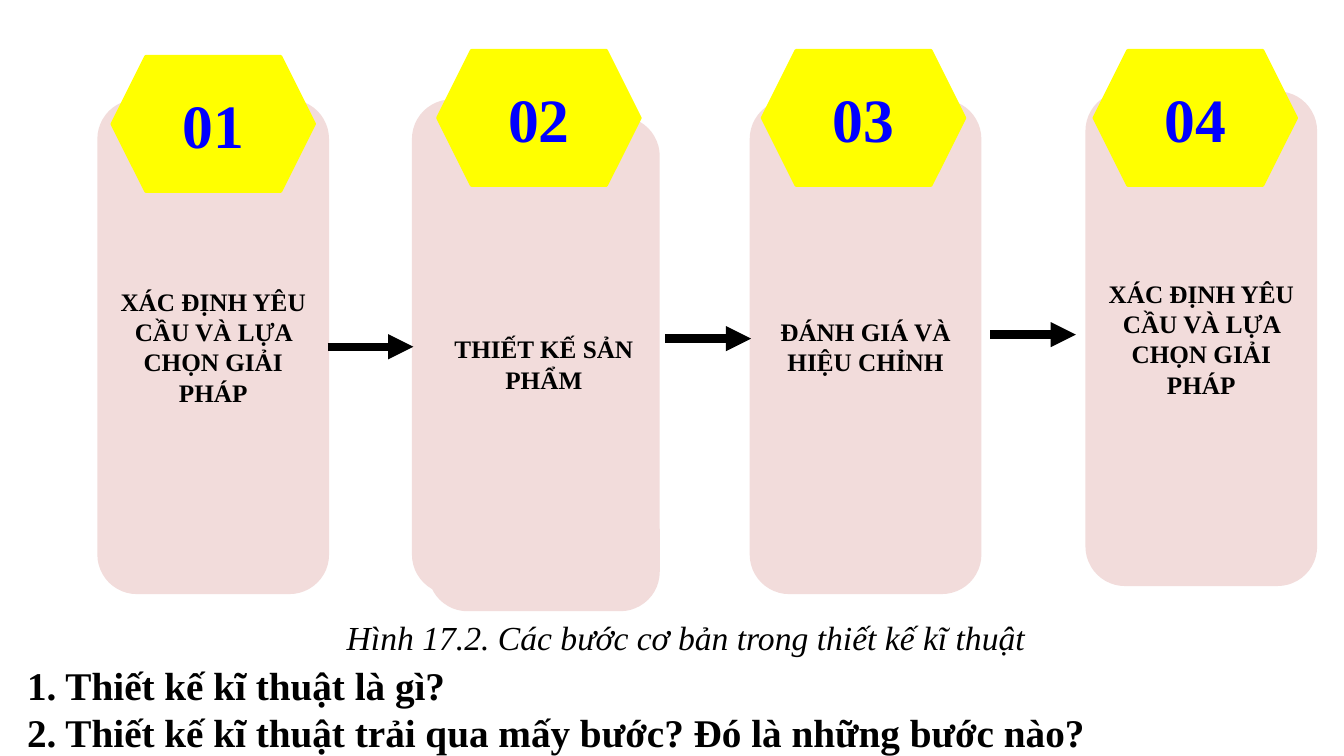
import pptx
import pptx.util
import pptx.dml.color
import pptx.enum.shapes
import pptx.enum.text
import pptx.oxml.ns
from lxml import etree

Inches = pptx.util.Inches
SHAPES = pptx.enum.shapes.MSO_SHAPE

FONT = "Times New Roman"
COLORS = {"card": "F2DCDB", "badge": "FFFF00", "number": "0000FF", "text": "000000"}

DEFINE = "XÁC ĐỊNH YÊU CẦU VÀ LỰA CHỌN GIẢI PHÁP"
DESIGN = "THIẾT KẾ SẢN PHẨM"
EVALUATE = "ĐÁNH GIÁ VÀ HIỆU CHỈNH"

# Text, left, top
CARDS = [
    (DEFINE, 0.98, 1.0),
    (DESIGN, 4.1, 1.0),
    (DESIGN, 4.26, 1.17),
    (EVALUATE, 7.45, 1.0),
    (DEFINE, 10.78, 0.92),
]
BADGES = [("01", 1.11, 0.56), ("02", 4.34, 0.5), ("03", 7.56, 0.5), ("04", 10.85, 0.5)]
CARD_SIZE = (2.27, 4.88)
BADGE_SIZE = (2.01, 1.34)

# Left, height on the slide
ARROWS = [(3.25, 3.44), (6.6, 3.36), (9.82, 3.32)]
ARROW_LENGTH = 0.85

CAPTION = ["Hình 17.2. Các bước cơ bản trong thiết kế kĩ thuật"]
QUESTIONS = [
    "1. Thiết kế kĩ thuật là gì?",
    "2. Thiết kế kĩ thuật trải qua mấy bước? Đó là những bước nào?",
]


def color(name):
    return pptx.dml.color.RGBColor.from_string(COLORS[name])


def format_text(text_frame, size, color_name, bold=False, italic=False):
    for paragraph in text_frame.paragraphs:
        for run in paragraph.runs:
            run.font.name = FONT
            run.font.size = pptx.util.Pt(size)
            run.font.bold = bold
            run.font.italic = italic
            run.font.color.rgb = color(color_name)


def add_block(slide, kind, item, block_size, fill, text_size, text_color):
    """Add a filled shape with bold centred text."""
    text, left, top = item
    shape = slide.shapes.add_shape(kind, *map(Inches, (left, top, *block_size)))
    shape.shadow.inherit = False
    shape.fill.solid()
    shape.fill.fore_color.rgb = color(fill)
    shape.line.color.rgb = color(fill)
    shape.line.width = pptx.util.Pt(2)
    text_frame = shape.text_frame
    text_frame.text = text
    text_frame.word_wrap = True
    text_frame.vertical_anchor = pptx.enum.text.MSO_ANCHOR.MIDDLE
    text_frame.paragraphs[0].alignment = pptx.enum.text.PP_ALIGN.CENTER
    format_text(text_frame, text_size, text_color, bold=True)
    return shape


def add_arrow(slide, left, height):
    arrow = slide.shapes.add_connector(
        pptx.enum.shapes.MSO_CONNECTOR.STRAIGHT,
        *map(Inches, (left, height, left + ARROW_LENGTH, height)))
    arrow.line.color.rgb = color("text")
    arrow.line.width = pptx.util.Pt(6)
    qn = pptx.oxml.ns.qn
    etree.SubElement(arrow.line._get_or_add_ln(), qn("a:tailEnd"), type="triangle")
    etree.SubElement(arrow._element.spPr, qn("a:effectLst"))
    return arrow


def add_text(slide, lines, box, size, **style):
    text_frame = slide.shapes.add_textbox(*map(Inches, box)).text_frame
    text_frame.text = "\n".join(lines)
    text_frame.word_wrap = True
    text_frame.auto_size = pptx.enum.text.MSO_AUTO_SIZE.SHAPE_TO_FIT_TEXT
    format_text(text_frame, size, "text", **style)


def main():
    presentation = pptx.Presentation()
    presentation.slide_width = Inches(13.33)
    presentation.slide_height = Inches(7.5)
    slide = presentation.slides.add_slide(presentation.slide_layouts[6])

    cards = [add_block(slide, SHAPES.ROUNDED_RECTANGLE, card, CARD_SIZE, "card", 18, "text")
             for card in CARDS]
    for badge in BADGES:
        add_block(slide, SHAPES.HEXAGON, badge, BADGE_SIZE, "badge", 44, "number")

    arrows = [add_arrow(slide, *arrow) for arrow in ARROWS]
    arrows[0].begin_connect(cards[0], 3)
    arrows[0].end_connect(cards[1], 1)

    add_text(slide, CAPTION, (3.34, 6.07, 7.51, 0.5), 24, italic=True)
    add_text(slide, QUESTIONS, (0.17, 6.51, 11.96, 1.04), 28, bold=True)
    presentation.save("out.pptx")


if __name__ == "__main__":
    main()
